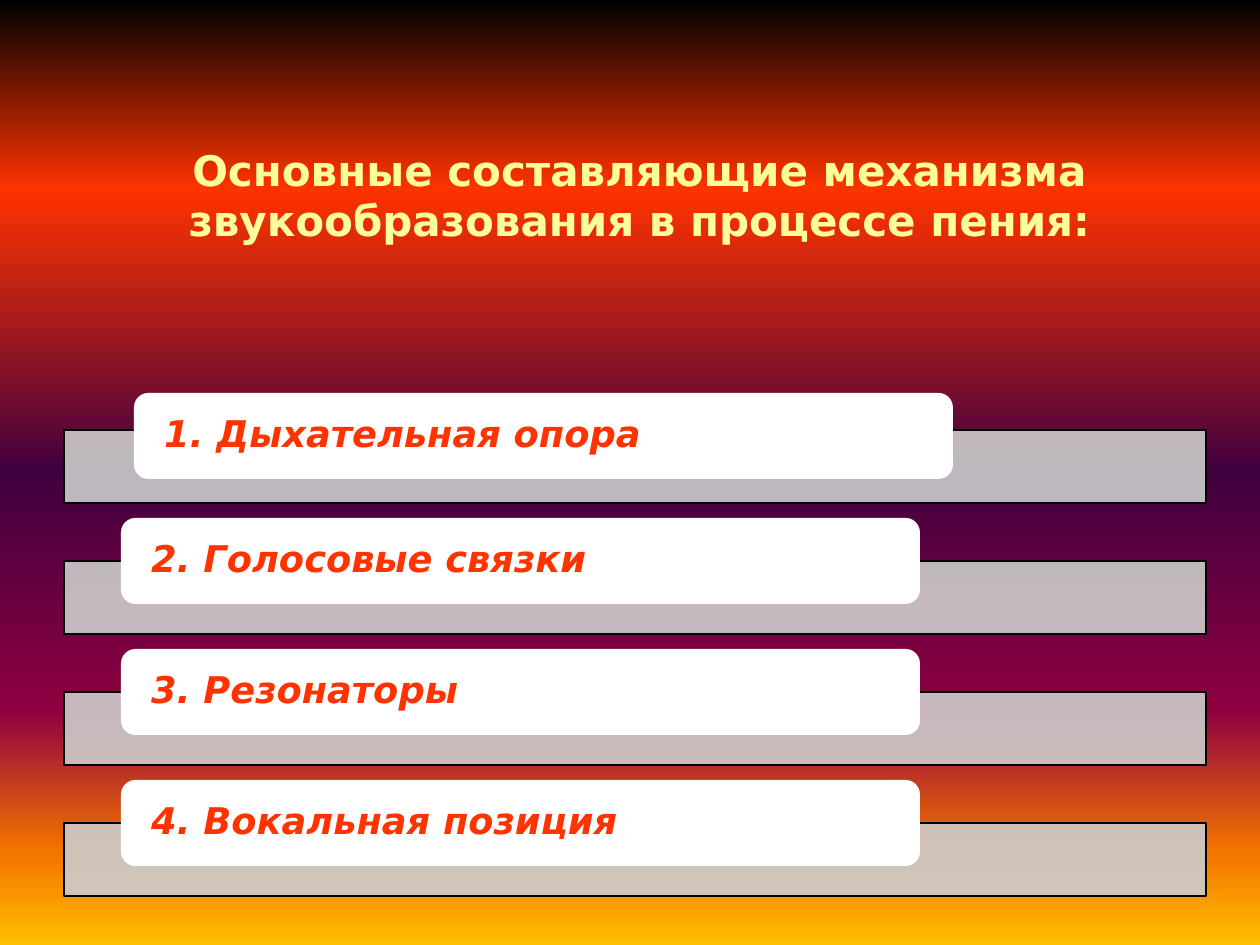
from lxml import etree
from pptx import Presentation
from pptx import util as u
from pptx.dml.color import RGBColor
from pptx.enum import shapes, text
from pptx.oxml.ns import qn

TITLE = "Основные составляющие механизма звукообразования в процессе пения:"
ITEMS = [
    # label, left, top, width of the pill
    ("1. Дыхательная опора", 134, 393, 819),
    ("2. Голосовые связки", 121, 518, 799),
    ("3. Резонаторы", 121, 649, 799),
    ("4. Вокальная позиция", 121, 780, 799),
]
BACKGROUND = [(0, "000000"), (20, "FF3300"), (50, "400040"),
              (75, "8F0040"), (90, "F27300"), (100, "FFBF00")]
FONT = "DejaVu Sans"
BAR_LEFT, BAR_TOP, BAR_WIDTH, BAR_HEIGHT, PITCH = 64, 430, 1142, 73, 131
PILL_HEIGHT = 86


def px(n):
    return u.Emu(round(n * 914400 / 126))


def rgb(value):
    return RGBColor.from_string(value)


def style(p, size, color, italic=None):
    p.font.name, p.font.size = FONT, u.Pt(size)
    p.font.bold, p.font.italic = True, italic
    p.font.color.rgb = rgb(color)


def paint_background(slide):
    fill = slide.background.fill
    fill.gradient()
    fill.gradient_angle = 270
    stops = slide.element.find(".//" + qn("a:gsLst"))
    for old in list(stops):
        stops.remove(old)
    for pos, color in BACKGROUND:
        gs = etree.SubElement(stops, qn("a:gs"), pos=str(pos * 1000))
        etree.SubElement(gs, qn("a:srgbClr"), val=color)


def add_box(slide, kind, left, top, width, height, color):
    sp = slide.shapes.add_shape(kind, px(left), px(top), px(width), px(height))
    sp.shadow.inherit = False
    sp.fill.solid()
    sp.fill.fore_color.rgb = rgb(color)
    return sp


def add_bar(slide, top):
    bar = add_box(slide, shapes.MSO_SHAPE.RECTANGLE,
                  BAR_LEFT, top, BAR_WIDTH, BAR_HEIGHT, "CCCCCC")
    color = bar.element.spPr.find(qn("a:solidFill"))[0]
    etree.SubElement(color, qn("a:alpha"), val="90000")
    bar.line.color.rgb = rgb("000000")
    bar.line.width = u.Pt(0.75)


def add_pill(slide, label, left, top, width):
    pill = add_box(slide, shapes.MSO_SHAPE.ROUNDED_RECTANGLE,
                   left, top, width, PILL_HEIGHT, "FFFFFF")
    pill.line.fill.background()
    tf = pill.text_frame
    tf.word_wrap = True
    tf.vertical_anchor = text.MSO_ANCHOR.MIDDLE
    # The rounded corners already inset the text by about 4 px
    tf.margin_left = tf.margin_right = px(26)
    tf.margin_top = tf.margin_bottom = 0
    p = tf.paragraphs[0]
    p.text = label
    p.alignment = text.PP_ALIGN.LEFT
    p.line_spacing = 0.9
    style(p, 21, "FF3300", italic=True)


def add_title(slide):
    title = slide.shapes.title
    title.left, title.top, title.width, title.height = map(px, (74, 138, 1131, 115))
    tf = title.text_frame
    tf.word_wrap = True
    tf.auto_size = text.MSO_AUTO_SIZE.NONE
    tf.vertical_anchor = text.MSO_ANCHOR.TOP
    p = tf.paragraphs[0]
    p.text = TITLE
    p.alignment = text.PP_ALIGN.CENTER
    style(p, 24, "FFFF99")


def main():
    prs = Presentation()
    prs.slide_width, prs.slide_height = px(1260), px(945)
    slide = prs.slides.add_slide(prs.slide_layouts[5])
    paint_background(slide)
    add_title(slide)
    for i, (label, left, top, width) in enumerate(ITEMS):
        add_bar(slide, BAR_TOP + i * PITCH)
        add_pill(slide, label, left, top, width)
    prs.save("out.pptx")


if __name__ == "__main__":
    main()
